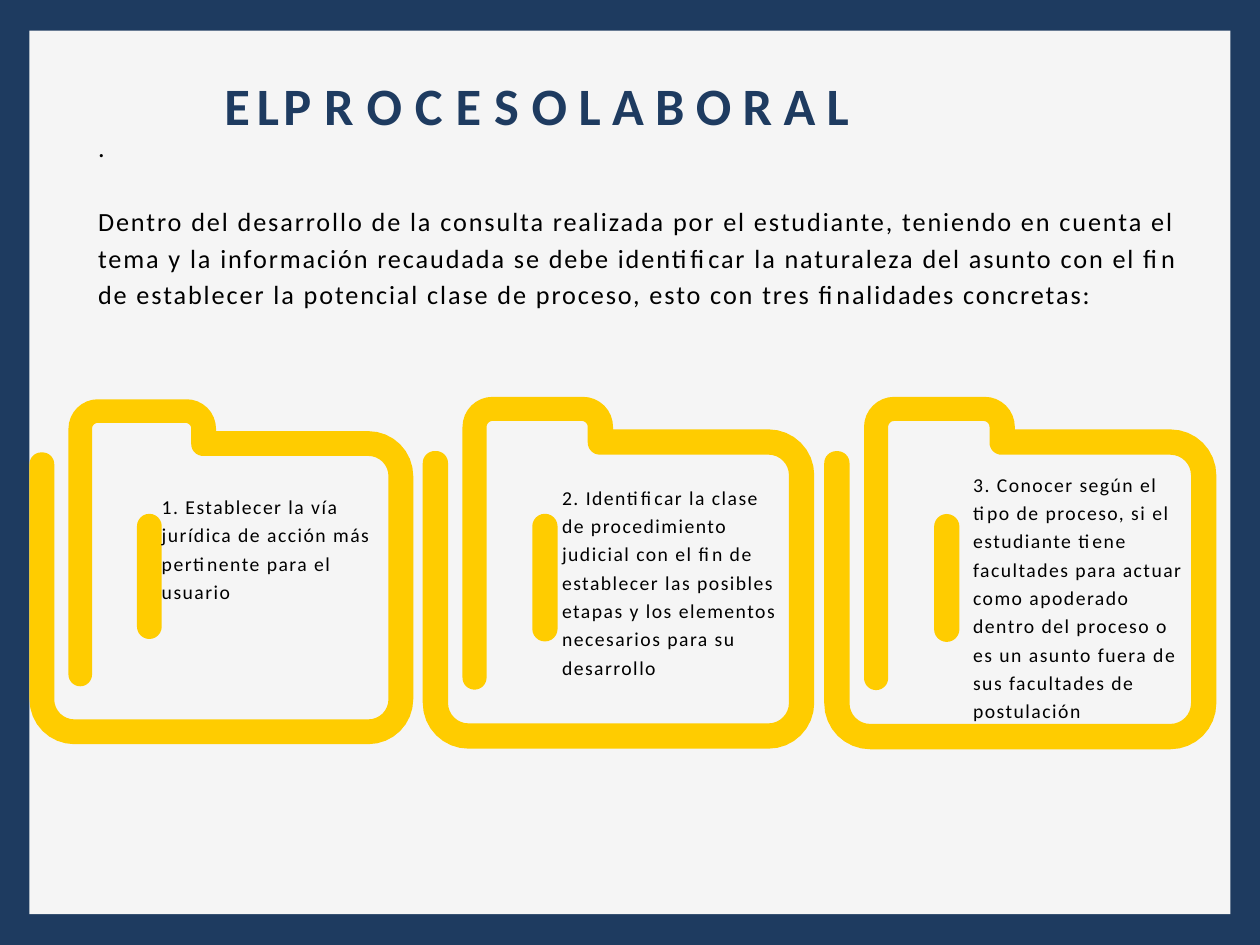
"""Build the slide on the labour process: a title, an introduction and three folders."""
import copy
import math
from dataclasses import dataclass

import pptx
import pptx.dml.color
import pptx.enum.shapes
import pptx.enum.text
import pptx.oxml
import pptx.oxml.ns
import pptx.util

COLORS = {"navy": "1E3B60", "panel": "F5F5F5", "yellow": "FFCC00", "black": "000000"}
SLIDE_W, SLIDE_H = pptx.util.Inches(10.67), pptx.util.Inches(8)
FOLDER_W = 3.25
FOLDER_OUTLINE = [
    (0, 0.45, 0.1), (0.21, 0.45, 0.1), (0.21, 2.71, 0.17), (3.04, 2.71, 0.17),
    (3.04, 0.48, 0.17), (1.37, 0.48, 0.1), (1.37, 0.2, 0.05), (0.53, 0.2, 0.05),
    (0.53, 2.43, 0.1), (0.33, 2.43, 0.1), (0.33, 0, 0.25), (1.58, 0, 0.25),
    (1.58, 0.27, 0), (3.25, 0.27, 0.38), (3.25, 2.92, 0.38), (0, 2.92, 0.38),
]
PILL = (0.91, 0.97, 0.21, 1.06)


@dataclass
class Box:
    """Hold a place as percentages of the slide's width and height."""
    left: float
    top: float
    width: float = 0
    height: float = 0

    def emu(self) -> list[int]:
        """Return left, top, width and height in EMU."""
        return [round(share * side / 100) for share, side in zip(
            (self.left, self.top, self.width, self.height), (SLIDE_W, SLIDE_H) * 2)]


@dataclass
class Folder:
    """Describe one folder, its width share and its text."""
    place: Box
    text_box: Box
    text: str


FOLDERS = [
    Folder(Box(2.34, 42.25, 30.46), Box(12.84, 51.88, 17.15, 12.13),
           "1. Establecer la vía\njurídica de acción más\npertinente para el\nusuario"),
    Folder(Box(33.55, 42, 31.07), Box(44.61, 50.88, 17.71, 21.13),
           "2. Identificar la clase\nde procedimiento\njudicial con el fin de\n"
           "establecer las posibles\netapas y los elementos\nnecesarios para su\ndesarrollo"),
    Folder(Box(65.42, 42, 31.12), Box(77.23, 49.5, 17.34, 27.13),
           "3. Conocer según el\ntipo de proceso, si el\nestudiante tiene\n"
           "facultades para actuar\ncomo apoderado\ndentro del proceso o\n"
           "es un asunto fuera de\nsus facultades de\npostulación"),
]
TITLE = [("E L\t", -1.5), ("P R O C E S O\t", 0.3), ("L A B O R A L", -0.2)]
INTRO = ("Dentro del desarrollo de la consulta realizada por el estudiante, teniendo en "
         "cuenta el tema y la información recaudada se debe identificar la naturaleza del "
         "asunto con el fin de establecer la potencial clase de proceso, esto con tres "
         "finalidades concretas:")


def rgb(name: str) -> pptx.dml.color.RGBColor:
    """Return a palette colour."""
    return pptx.dml.color.RGBColor.from_string(COLORS[name])


def paint(sp, color: str) -> None:
    """Give a shape a flat fill with no line or shadow."""
    sp.fill.solid()
    sp.fill.fore_color.rgb = rgb(color)
    sp.line.fill.background()
    sp.shadow.inherit = False


def write(sp, box: Box, runs: list[tuple[str, float]], size: float = 12, bold: bool = False,
          color: str = "black", spacing: float = 1, tabs: tuple[float, ...] = ()) -> None:
    """Place a text shape and fill its paragraph with letter-spaced runs."""
    sp.left, sp.top, sp.width, sp.height = box.emu()
    tf = sp.text_frame
    tf.word_wrap = True
    tf.auto_size = pptx.enum.text.MSO_AUTO_SIZE.NONE
    tf.vertical_anchor = pptx.enum.text.MSO_ANCHOR.TOP
    tf.margin_left = tf.margin_right = tf.margin_top = tf.margin_bottom = 0
    p = tf.paragraphs[0]
    p.alignment = pptx.enum.text.PP_ALIGN.LEFT
    p.line_spacing = spacing
    p.space_before = pptx.util.Pt(0)
    pPr = p._p.get_or_add_pPr()
    pPr.set("marL", "0")
    pPr.set("indent", "0")
    pptx.oxml.ns.qn("a:buNone")
    pPr.append(pptx.oxml.parse_xml(f'<a:buNone {pptx.oxml.ns.nsdecls("a")}/>'))
    if tabs:
        stops = "".join(f'<a:tab pos="{pptx.util.Inches(t)}" algn="l"/>' for t in tabs)
        pPr.append(pptx.oxml.parse_xml(
            f'<a:tabLst {pptx.oxml.ns.nsdecls("a")}>{stops}</a:tabLst>'))
    for text, tracking in runs:
        for i, line in enumerate(text.split("\n")):
            if i:
                p.add_line_break()
                p._p[-1].append(copy.deepcopy(r._r.rPr))
            r = p.add_run()
            r.text = line
            r.font.name = "Calibri"
            r.font.size = pptx.util.Pt(size)
            r.font.bold = bold
            r.font.color.rgb = rgb(color)
            r._r.get_or_add_rPr().set("spc", str(round(tracking * 100)))


def rounded(corners: list[tuple[float, float, float]], steps: int = 8) -> list[tuple[float, float]]:
    """Turn right-angled corners with radii into a smooth closed outline."""
    points = []
    for i, (x, y, radius) in enumerate(corners):
        (ax, ay, _), (bx, by, _) = corners[i - 1], corners[(i + 1) % len(corners)]
        before, after = math.dist((x, y), (ax, ay)), math.dist((x, y), (bx, by))
        ux, uy = (ax - x) / before * radius, (ay - y) / before * radius
        vx, vy = (bx - x) / after * radius, (by - y) / after * radius
        for k in range(steps + 1 if radius else 1):
            angle = math.pi / 2 * k / steps
            s, c = 1 - math.sin(angle), 1 - math.cos(angle)
            points.append((x + ux * s + vx * c, y + uy * s + vy * c))
    return points


def draw_folder(shapes, folder: Folder) -> None:
    """Draw a folder outline, its inner bar and its text."""
    left, top, width, _ = folder.place.emu()
    unit = width / FOLDER_W
    points = [(left + x * unit, top + y * unit) for x, y in rounded(FOLDER_OUTLINE)]
    builder = shapes.build_freeform(*points[0])
    builder.add_line_segments(points[1:], close=True)
    paint(builder.convert_to_shape(), "yellow")
    x, y, w, h = (round(v * unit) for v in PILL)
    pill = shapes.add_shape(pptx.enum.shapes.MSO_SHAPE.ROUNDED_RECTANGLE, left + x, top + y, w, h)
    pill.adjustments[0] = 0.5
    paint(pill, "yellow")
    write(shapes.add_textbox(0, 0, 0, 0), folder.text_box, [(folder.text, 0.9)], spacing=1.2)


def main() -> None:
    """Build and save the slide."""
    prs = pptx.Presentation()
    prs.slide_width, prs.slide_height = SLIDE_W, SLIDE_H
    slide = prs.slides.add_slide(prs.slide_layouts[1])
    shapes = slide.shapes
    slide.background.fill.solid()
    slide.background.fill.fore_color.rgb = rgb("navy")
    panel = shapes.add_shape(pptx.enum.shapes.MSO_SHAPE.RECTANGLE,
                             *Box(2.34, 3.25, 95.31, 93.5).emu())
    paint(panel, "panel")
    shapes._spTree.insert(2, panel._element)
    write(shapes.title, Box(17.81, 7.75, 61.76, 7.25), TITLE, size=32, bold=True,
          color="navy", tabs=(0.88, 3.9))
    write(shapes.add_textbox(0, 0, 0, 0), Box(7.78, 13.88, 0.75, 3.5), [(".", -0.2)], size=16)
    write(slide.placeholders[1], Box(7.78, 21.13, 87.07, 12), [(INTRO, 1.2)],
          size=16, spacing=1.17)
    for folder in FOLDERS:
        draw_folder(shapes, folder)
    prs.save("out.pptx")


if __name__ == "__main__":
    main()
